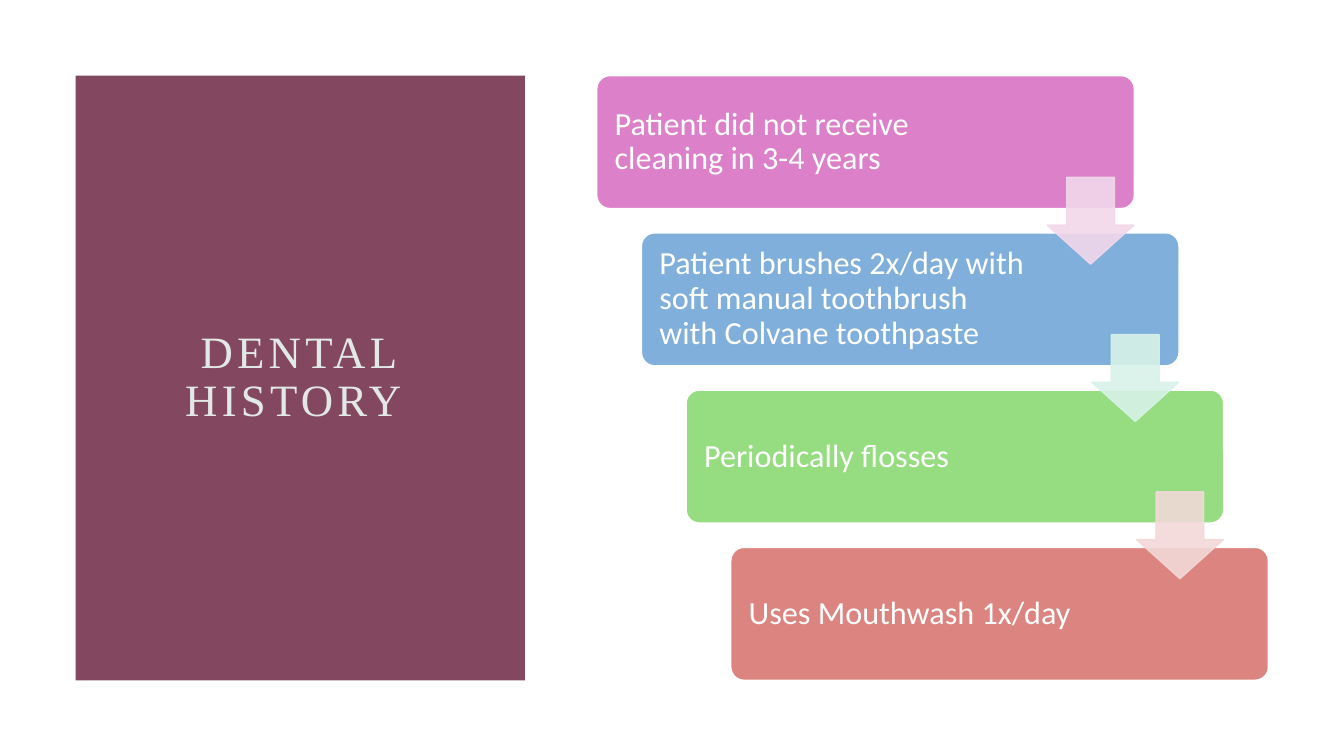
"""Build the dental history slide with four descending steps."""
from lxml import etree
from pptx import Presentation
from pptx import util as u
from pptx.dml.color import RGBColor
from pptx.enum import shapes, text
from pptx.oxml.ns import qn


def colour(value):
    return RGBColor.from_string(value)


class Deck:
    body = {"name": "Calibri", "size": u.Pt(23)}
    heading = {"name": "Times New Roman", "size": u.Pt(32), "bold": False}

    def __init__(self, presentation):
        self.slide = presentation.slides.add_slide(presentation.slide_layouts[5])

    def shape(self, kind, box, fill, line=None, adjustments=(), opacity=None):
        shape = self.slide.shapes.add_shape(kind, *map(u.Pt, box))
        shape.shadow.inherit = False
        shape.fill.solid()
        shape.fill.fore_color.rgb = colour(fill)
        if line:
            shape.line.color.rgb = colour(line)
            shape.line.width = u.Pt(1)
        else:
            shape.line.fill.background()
        for index, value in enumerate(adjustments):
            shape.adjustments[index] = value
        if opacity:
            for element in shape._element.spPr.iter(qn("a:srgbClr")):
                etree.SubElement(element, qn("a:alpha"), val=str(opacity * 1000))
        return shape

    def label(self, shape, words, style, ink, alignment, insets):
        frame = shape.text_frame
        frame.text = words
        layout = dict(zip(("margin_left", "margin_top", "margin_right", "margin_bottom"),
                          map(u.Pt, insets)))
        layout.update(word_wrap=True, auto_size=text.MSO_AUTO_SIZE.NONE,
                      vertical_anchor=text.MSO_ANCHOR.MIDDLE)
        for name, value in layout.items():
            setattr(frame, name, value)
        paragraph = frame.paragraphs[0]
        paragraph.alignment = alignment
        paragraph.line_spacing = 0.9
        font = paragraph.runs[0].font
        for name, value in style.items():
            setattr(font, name, value)
        font.color.rgb = colour(ink)
        return paragraph.runs[0]

    def title(self, words, box, ink):
        title = self.slide.shapes.title
        for name, value in zip(("left", "top", "width", "height"), box):
            setattr(title, name, u.Pt(value))
        run = self.label(title, words, self.heading, ink,
                         text.PP_ALIGN.CENTER, (7.2, 3.6, 7.2, 3.6))
        run._r.get_or_add_rPr().set("spc", "300")
        self.slide.shapes._spTree.append(title._element)

    def step(self, words, box, fill):
        card = self.shape(shapes.MSO_SHAPE.ROUNDED_RECTANGLE, box, fill, "FFFFFF", [0.1])
        self.label(card, words, self.body, "FFFFFF",
                   text.PP_ALIGN.LEFT, (10, 10, 103, 10))

    def arrow(self, box, fill):
        self.shape(shapes.MSO_SHAPE.DOWN_ARROW, box, fill, fill, [0.55, 0.45], 90)


def main():
    presentation = Presentation()
    presentation.slide_width, presentation.slide_height = u.Pt(960), u.Pt(540)
    deck = Deck(presentation)
    deck.shape(shapes.MSO_SHAPE.RECTANGLE, (54, 54, 321, 432), "83485F")
    deck.title("DENTAL HISTORY ", (108, 108, 213, 324), "E2E8E6")

    steps = [
        ("Patient did not receive cleaning in 3-4 years", "DC80C9"),
        ("Patient brushes 2x/day with soft manual toothbrush with Colvane toothpaste",
         "80AFDC"),
        ("Periodically flosses", "96DC80"),
        ("Uses Mouthwash 1x/day", "DC8480"),
    ]
    across, down = 31.92, 112.32
    for index, (words, fill) in enumerate(steps):
        deck.step(words, (426.24 + index * across, 54 + index * down, 384, 95), fill)
    for index, fill in enumerate(["F2D8EB", "D8F2E8", "F2D9D8"]):
        deck.arrow((748 + index * across, 126.72 + index * down, 62, 62), fill)
    presentation.save("out.pptx")


if __name__ == "__main__":
    main()
